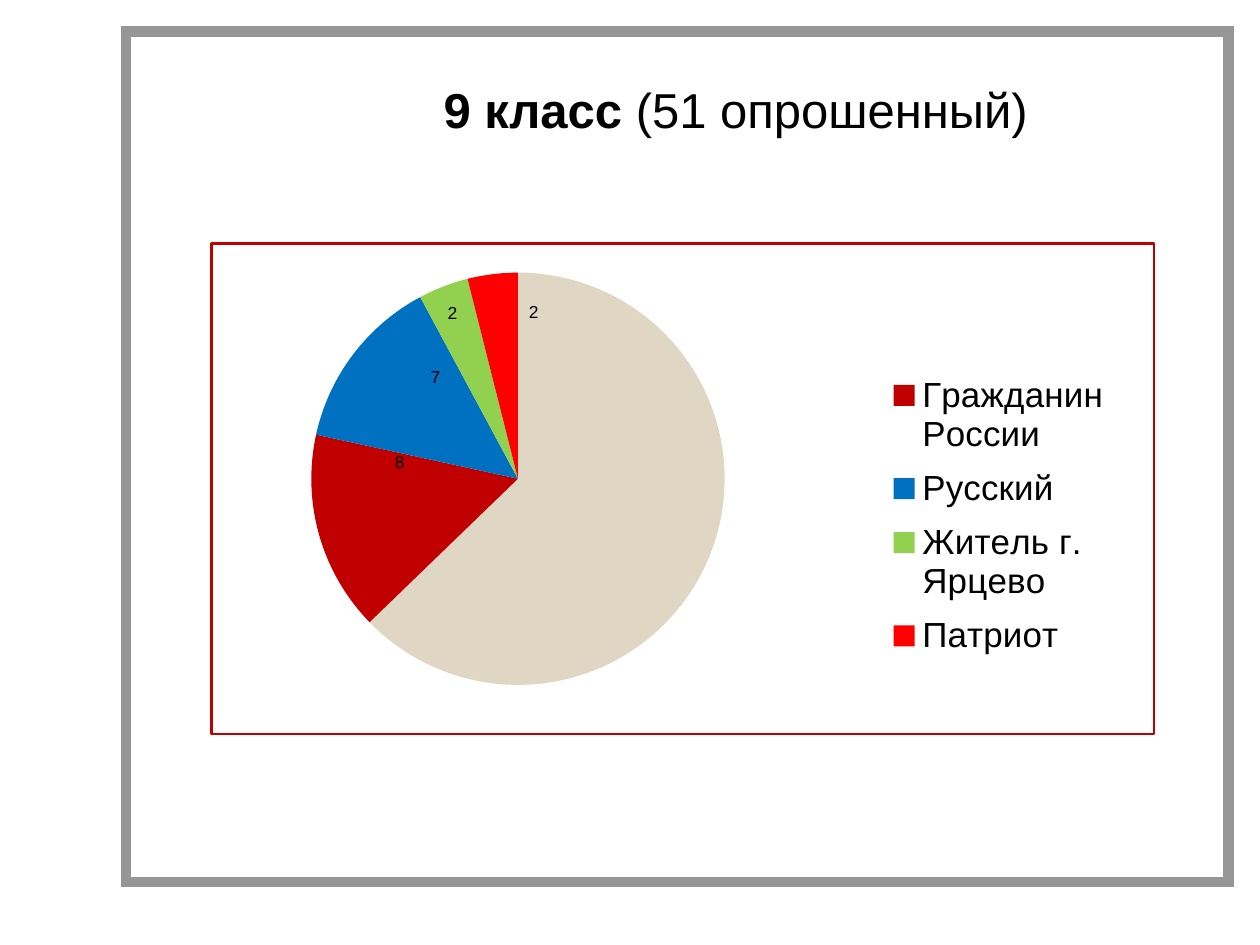
from lxml.etree import SubElement
from pptx import Presentation
from pptx.chart.data import CategoryChartData
from pptx.dml.color import RGBColor
from pptx.enum.chart import XL_CHART_TYPE, XL_LABEL_POSITION, XL_LEGEND_POSITION
from pptx.enum.shapes import MSO_SHAPE
from pptx.enum.text import MSO_ANCHOR, MSO_AUTO_SIZE, PP_ALIGN
from pptx.oxml import parse_xml
from pptx.oxml.ns import nsdecls, qn
from pptx.util import Pt

BLACK = RGBColor(0x00, 0x00, 0x00)
WHITE = RGBColor(0xFF, 0xFF, 0xFF)
GREY = RGBColor(0x96, 0x96, 0x96)
BEIGE = RGBColor(0xDF, 0xD6, 0xC3)
DARK_RED = RGBColor(0xC0, 0x00, 0x00)
BLUE = RGBColor(0x00, 0x70, 0xC0)
GREEN = RGBColor(0x92, 0xD0, 0x50)
RED = RGBColor(0xFF, 0x00, 0x00)

TITLE_RUNS = [("9 класс ", True), ("(51 опрошенный)", False)]
SLICES = [
    ("", 32, BEIGE, None),
    ("Гражданин России", 8, DARK_RED, (-0.02, -0.09)),
    ("Русский", 7, BLUE, (0, -0.08)),
    ("Житель г. Ярцево", 2, GREEN, (-0.03, -0.14)),
    ("Патриот", 2, RED, (0.03, -0.13)),
]
FRAME_BOX = (72, 18, 630, 486)
TITLE_BOX = (246.25, 41.75, 352.8, 41)
CHART_BOX = (120.25, 138.25, 540, 282)
PLOT_AREA = {"layoutTarget": "inner", "xMode": "edge", "yMode": "edge",
             "x": 0, "y": 0.06, "w": 0.65, "h": 0.84}
LEGEND_AREA = {"xMode": "edge", "yMode": "edge",
               "x": 0.7, "y": 0.24, "w": 0.27, "h": 0.63}
TITLE_FONT = {"name": "Arial", "size": Pt(28)}
CHART_FONT = {"name": "Times New Roman", "size": Pt(18)}
LEGEND_FONT = {"name": "Arial", "size": Pt(20)}
LABEL_FONT = {"name": "Arial", "size": Pt(10)}


def format_font(font, values):
    for name, value in values.items():
        setattr(font, name, value)
    font.color.rgb = BLACK


def place(shape, box):
    for name, value in zip(("left", "top", "width", "height"), box):
        setattr(shape, name, Pt(value))


def make_layout(values):
    layout = parse_xml(f"<c:layout {nsdecls('c')}/>")
    manual = SubElement(layout, qn("c:manualLayout"))
    for name, value in values.items():
        SubElement(manual, qn(f"c:{name}")).set("val", str(value))
    return layout


def add_title(slide):
    title = slide.shapes.title
    place(title, TITLE_BOX)
    frame = title.text_frame
    formats = {"word_wrap": False, "vertical_anchor": MSO_ANCHOR.TOP,
               "auto_size": MSO_AUTO_SIZE.SHAPE_TO_FIT_TEXT}
    for name, value in formats.items():
        setattr(frame, name, value)
    paragraph = frame.paragraphs[0]
    paragraph.alignment = PP_ALIGN.LEFT
    for text, bold in TITLE_RUNS:
        run = paragraph.add_run()
        run.text = text
        format_font(run.font, {**TITLE_FONT, "bold": bold})


def add_frame(slide):
    frame = slide.shapes.add_shape(MSO_SHAPE.RECTANGLE, *map(Pt, FRAME_BOX))
    frame.shadow.inherit = False
    frame.fill.solid()
    frame.fill.fore_color.rgb = WHITE
    frame.line.color.rgb = GREY
    frame.line.width = Pt(6)
    line = frame._element.spPr.find(qn("a:ln"))
    SubElement(line, qn("a:miter")).set("lim", "800000")
    slide.shapes._spTree.insert(2, frame._element)


def add_legend(chart):
    chart.has_legend = True
    legend = chart.legend
    legend.position = XL_LEGEND_POSITION.RIGHT
    legend.include_in_layout = False
    format_font(legend.font, LEGEND_FONT)
    element = legend._element
    for layout in element.findall(qn("c:layout")):
        element.remove(layout)
    removed_entry = parse_xml(f'<c:legendEntry {nsdecls("c")}><c:idx val="0"/>'
                              '<c:delete val="1"/></c:legendEntry>')
    element.find(qn("c:legendPos")).addnext(removed_entry)
    removed_entry.addnext(make_layout(LEGEND_AREA))


def add_pie(slide):
    data = CategoryChartData()
    data.categories = [entry[0] for entry in SLICES]
    data.add_series("", [entry[1] for entry in SLICES])
    chart = slide.shapes.add_chart(
        XL_CHART_TYPE.PIE, *map(Pt, CHART_BOX), data).chart
    chart.has_title = False
    format_font(chart.font, CHART_FONT)
    add_legend(chart)

    series = chart.plots[0].series[0]
    series.data_labels.show_value = False
    for index, (_, _, color, offset) in enumerate(SLICES):
        point = series.points[index]
        point.format.fill.solid()
        point.format.fill.fore_color.rgb = color
        if offset:
            label = point.data_label
            format_font(label.font, LABEL_FONT)
            label.position = XL_LABEL_POSITION.CENTER
            element = series.data_labels._element.findall(qn("c:dLbl"))[-1]
            element.insert(1, make_layout(dict(zip("xy", offset))))

    chart_element = chart._chartSpace.find(qn("c:chart"))
    plot_area = chart_element.find(qn("c:plotArea"))
    for layout in plot_area.findall(qn("c:layout")):
        plot_area.remove(layout)
    plot_area.insert(0, make_layout(PLOT_AREA))
    chart_element.addnext(parse_xml(
        f'<c:spPr {nsdecls("c", "a")}><a:noFill/><a:ln w="{Pt(1.5)}"><a:solidFill>'
        f'<a:srgbClr val="{DARK_RED}"/></a:solidFill></a:ln></c:spPr>'))


def main():
    """Build the survey slide with its framed pie chart."""
    presentation = Presentation()
    presentation.slide_width, presentation.slide_height = Pt(720), Pt(540)
    slide = presentation.slides.add_slide(presentation.slide_layouts[5])
    add_frame(slide)
    add_pie(slide)
    add_title(slide)
    presentation.save("out.pptx")


if __name__ == "__main__":
    main()
